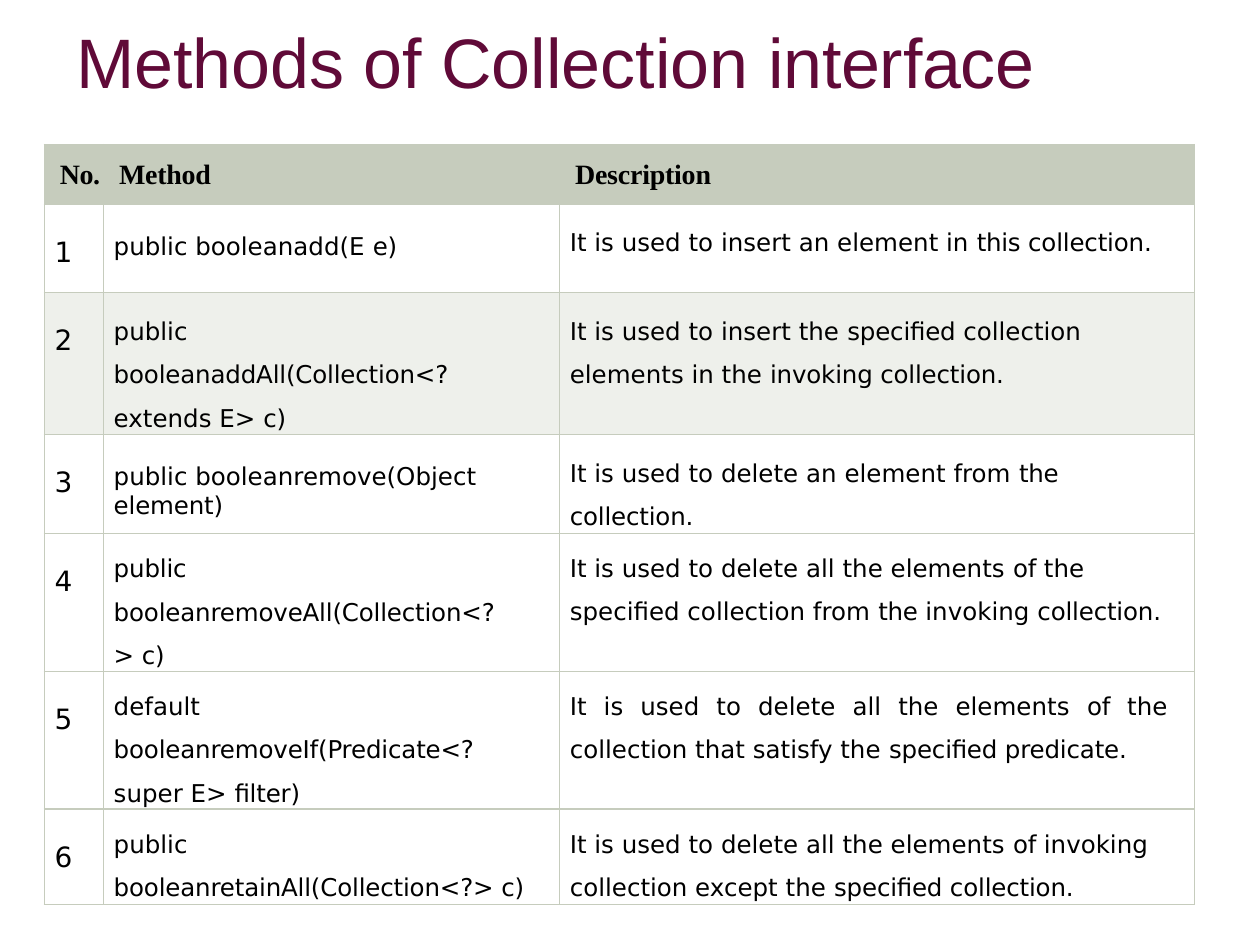
from lxml.etree import SubElement
from pptx import Presentation
from pptx.dml.color import RGBColor
from pptx.enum.text import MSO_ANCHOR, MSO_AUTO_SIZE, PP_ALIGN
from pptx.oxml.ns import qn
from pptx.util import Pt

PLUM = RGBColor(0x60, 0x0A, 0x38)
SAGE = RGBColor(0xC6, 0xCC, 0xBD)
PALE_SAGE = RGBColor(0xEE, 0xF0, 0xEB)
BLACK = RGBColor(0, 0, 0)

# Every text is a list of (wording, letter spacing in points).
TITLE = [("Methods of Collection ", 0), ("interface", -0.1)]
HEADINGS = [[("No.", -0.2)], [("Method", -0.1)], [("Description", -0.1)]]
DELETE_ALL = [("It is used to delete all the elements ", 0), ("of ", -0.2)]
METHODS = [
    ([("public booleanadd(E ", 0), ("e)", -0.2)],
     [("It is used to insert an element in ", 0), ("this ", -0.2), ("collection.", -0.1)]),
    ([("public", 0), (" booleanaddAll(Collection<? ", -0.1), ("extends E> ", 0), ("c)", -0.2)],
     [("It is used to insert the ", 0), ("specified ", -0.1),
      ("collection elements in the ", 0), ("invoking collection.", -0.1)]),
    ([("public booleanremove(Object ", 0), ("element)", -0.1)],
     [("It is used to delete an element from ", 0), ("the ", -0.2), ("collection.", -0.1)]),
    ([("public booleanremoveAll(Collection<?> ", -0.1), ("c)", -0.2)],
     DELETE_ALL + [("the specified collection from ", 0), ("the ", -0.2),
                   ("invoking ", 0), ("collection.", -0.1)]),
    ([("default ", 0), ("booleanremoveIf(Predicate<? ", -0.1), ("super E> ", 0),
      ("filter)", -0.1)],
     DELETE_ALL + [("the collection that satisfy the ", 0), ("specified predicate.", -0.1)]),
    ([("public", 0), (" booleanretainAll(Collection<?> ", -0.1), ("c)", -0.2)],
     DELETE_ALL + [("invoking collection except the ", 0), ("specified collection.", -0.1)]),
]

COLUMN_WIDTHS = [33.84, 260.64, 362.88]
HEADER_HEIGHT = 34.4
ROW_HEIGHTS = [50.2, 81.2, 56.5, 78.8, 78.8, 54.4]
TEXT_TOPS = [6, 6.4, 6.4, 4.2, 4.2, 4.2]
SINGLE_SPACED = {1, 3}
SHADED = {2}
JUSTIFIED = {5}


def add_runs(para, runs, font_name, size, color, bold=False):
    for text, spacing in runs:
        span = para.add_run()
        span.text = text
        font = span.font
        font.name, font.size, font.bold = font_name, Pt(size), bold
        font.color.rgb = color
        if spacing:
            span._r.get_or_add_rPr().set("spc", str(round(spacing * 100)))


def add_borders(cell):
    properties = cell._tc.get_or_add_tcPr()
    for index, side in enumerate(("a:lnL", "a:lnR", "a:lnT", "a:lnB")):
        line = SubElement(properties, qn(side), w=str(Pt(0.75)))
        fill = SubElement(line, qn("a:solidFill"))
        SubElement(fill, qn("a:srgbClr"), val=str(SAGE))
        properties.remove(line)
        properties.insert(index, line)


def fill_cell(cell, runs, left, top, right=0, font_name="DejaVu Sans", size=14,
              bold=False, spacing=None, color=None, align=PP_ALIGN.LEFT):
    cell.margin_left, cell.margin_top = Pt(left), Pt(top)
    cell.margin_right, cell.margin_bottom = Pt(right), Pt(0)
    cell.vertical_anchor = MSO_ANCHOR.TOP
    if color is None:
        cell.fill.background()
    else:
        cell.fill.solid()
        cell.fill.fore_color.rgb = color
    add_borders(cell)
    para = cell.text_frame.paragraphs[0]
    para.alignment = align
    if spacing:
        para.line_spacing = spacing
    add_runs(para, runs, font_name, size, BLACK, bold)


def add_title(page):
    title = page.shapes.title
    title.left, title.top, title.width, title.height = Pt(42.5), Pt(9.4), Pt(623.5), Pt(49.7)
    frame = title.text_frame
    frame.auto_size = MSO_AUTO_SIZE.NONE
    frame.word_wrap = True
    frame.vertical_anchor = MSO_ANCHOR.TOP
    frame.margin_left = frame.margin_top = Pt(1)
    frame.margin_right = frame.margin_bottom = Pt(0)
    para = frame.paragraphs[0]
    para.alignment = PP_ALIGN.LEFT
    add_runs(para, TITLE, "Arial", 40, PLUM)


def add_method_table(page):
    heights = [HEADER_HEIGHT] + ROW_HEIGHTS
    table = page.shapes.add_table(
        len(heights), len(COLUMN_WIDTHS), Pt(25.2), Pt(82.5),
        Pt(sum(COLUMN_WIDTHS)), Pt(sum(heights))).table
    for column, width in zip(table.columns, COLUMN_WIDTHS):
        column.width = Pt(width)
    for row, height in zip(table.rows, heights):
        row.height = Pt(height)

    for index, heading in enumerate(HEADINGS):
        fill_cell(table.cell(0, index), heading, 9, 8.8, font_name="Times New Roman",
                  size=16, bold=True, color=SAGE)
    for number, (method, description) in enumerate(METHODS, start=1):
        color = PALE_SAGE if number in SHADED else None
        top = TEXT_TOPS[number - 1]
        single = number in SINGLE_SPACED
        fill_cell(table.cell(number, 0), [(str(number), -0.5)], 6, 18.6, size=16, color=color)
        fill_cell(table.cell(number, 1), method, 6, 16.2 if single else top,
                  right=18 if number == len(METHODS) else 32,
                  spacing=None if single else 1.5, color=color)
        fill_cell(table.cell(number, 2), description, 6, top, right=15.4, spacing=1.49,
                  color=color,
                  align=PP_ALIGN.JUSTIFY if number in JUSTIFIED else PP_ALIGN.LEFT)


def main():
    deck = Presentation()
    deck.slide_width, deck.slide_height = Pt(720), Pt(540)
    page = deck.slides.add_slide(deck.slide_layouts[5])
    add_title(page)
    add_method_table(page)
    deck.save("out.pptx")


if __name__ == "__main__":
    main()
